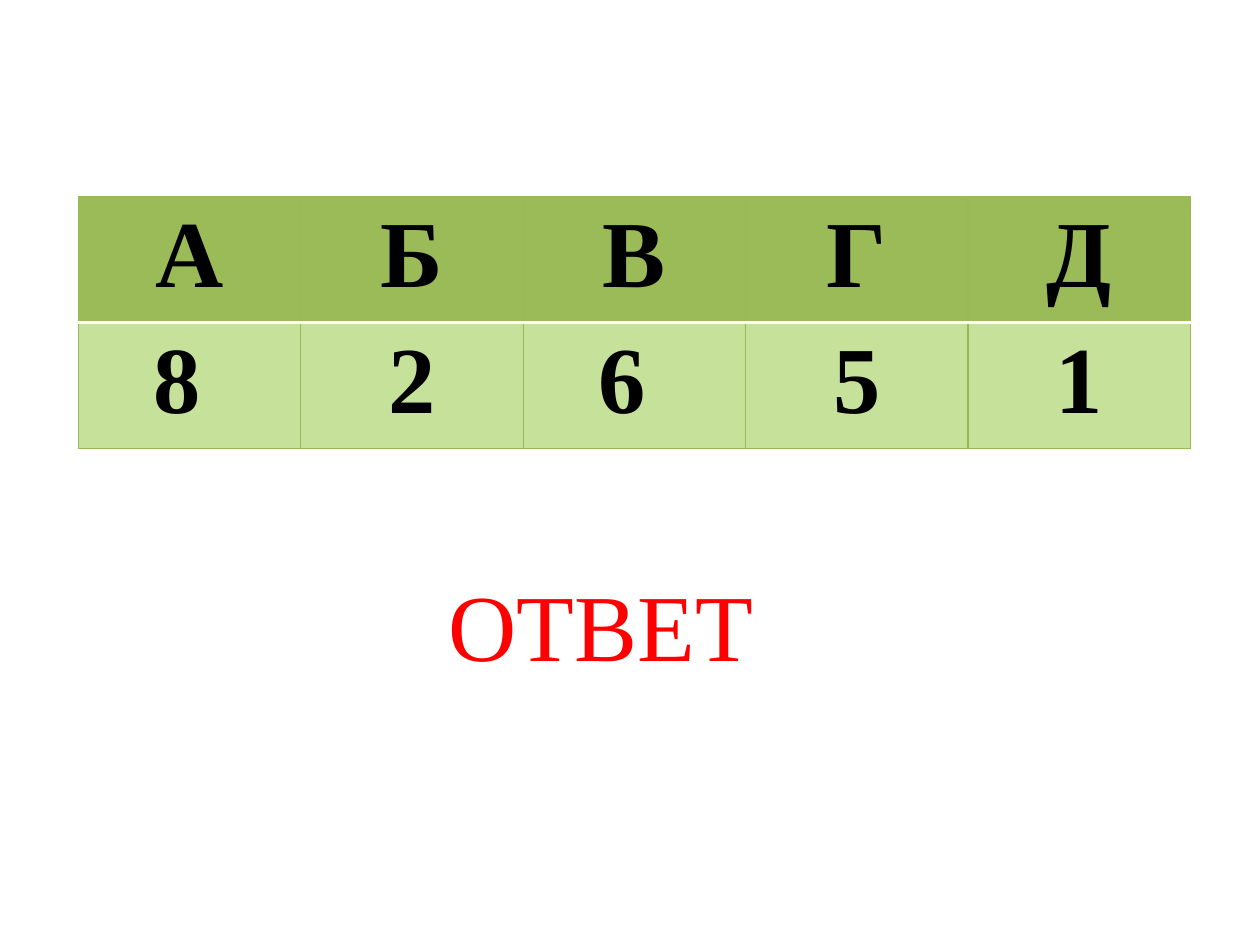
from lxml import etree
from pptx import Presentation
from pptx.dml.color import RGBColor
from pptx.enum.text import MSO_ANCHOR, PP_ALIGN
from pptx.oxml.ns import qn
from pptx.util import Inches, Pt

CENTER = PP_ALIGN.CENTER
TOP = MSO_ANCHOR.TOP
FONT = "Times New Roman"
TEXT_SIZE = 54
GREEN, LIGHT_GREEN, BORDER = "9BBB59", "C6E29A", "98B955"
ANSWERS = [["А", "Б", "В", "Г", "Д"], ["8 ", "2", "6 ", "5", "1"]]


def rgb(value):
    return RGBColor.from_string(value)


def set_font(paragraph, color, bold=False):
    font = paragraph.font
    font.name, font.size, font.bold = FONT, Pt(TEXT_SIZE), bold
    font.color.rgb = rgb(color)


def set_borders(cell, borders):
    """Borders maps lnL, lnR, lnT, lnB (in this order) to colour and width."""
    properties = cell._tc.get_or_add_tcPr()
    for position, (side, (color, width)) in enumerate(borders.items()):
        line = etree.Element(qn(f"a:{side}"), w=str(Pt(width)))
        fill = etree.SubElement(line, qn("a:solidFill"))
        etree.SubElement(fill, qn("a:srgbClr"), val=color)
        properties.insert(position, line)


def add_answer_table(slide, left, top, width, height):
    rows, columns = len(ANSWERS), len(ANSWERS[0])
    table = slide.shapes.add_table(rows, columns, left, top, width, height).table
    thin, divider = (BORDER, 0.75), ("FFFFFF", 2)
    for r, row in enumerate(ANSWERS):
        is_header = r == 0
        for c, text in enumerate(row):
            cell = table.cell(r, c)
            cell.text = text
            cell.vertical_anchor = TOP
            cell.fill.solid()
            cell.fill.fore_color.rgb = rgb(GREEN if is_header else LIGHT_GREEN)
            paragraph = cell.text_frame.paragraphs[0]
            paragraph.alignment = CENTER
            set_font(paragraph, "000000", bold=True)
            set_borders(cell, {
                "lnL": thin,
                "lnR": thin,
                "lnT": thin if is_header else divider,
                "lnB": divider if is_header else thin,
            })


def add_answer_label(slide, left, top, width, height):
    frame = slide.shapes.add_textbox(left, top, width, height).text_frame
    frame.word_wrap = True
    frame.margin_left = Inches(2.62)
    frame.text = "ОТВЕТ"
    set_font(frame.paragraphs[0], "FF0000")


def main():
    presentation = Presentation()
    presentation.slide_width, presentation.slide_height = Inches(10), Inches(7.5)
    slide = presentation.slides.add_slide(presentation.slide_layouts[6])

    # Letters with their matching numbers
    add_answer_table(slide, Inches(0.62), Inches(1.56), Inches(8.83), Inches(2))
    # Label below the table
    add_answer_label(slide, Inches(0.94), Inches(4.45), Inches(7.89), Inches(1.01))

    presentation.save("out.pptx")


if __name__ == "__main__":
    main()
